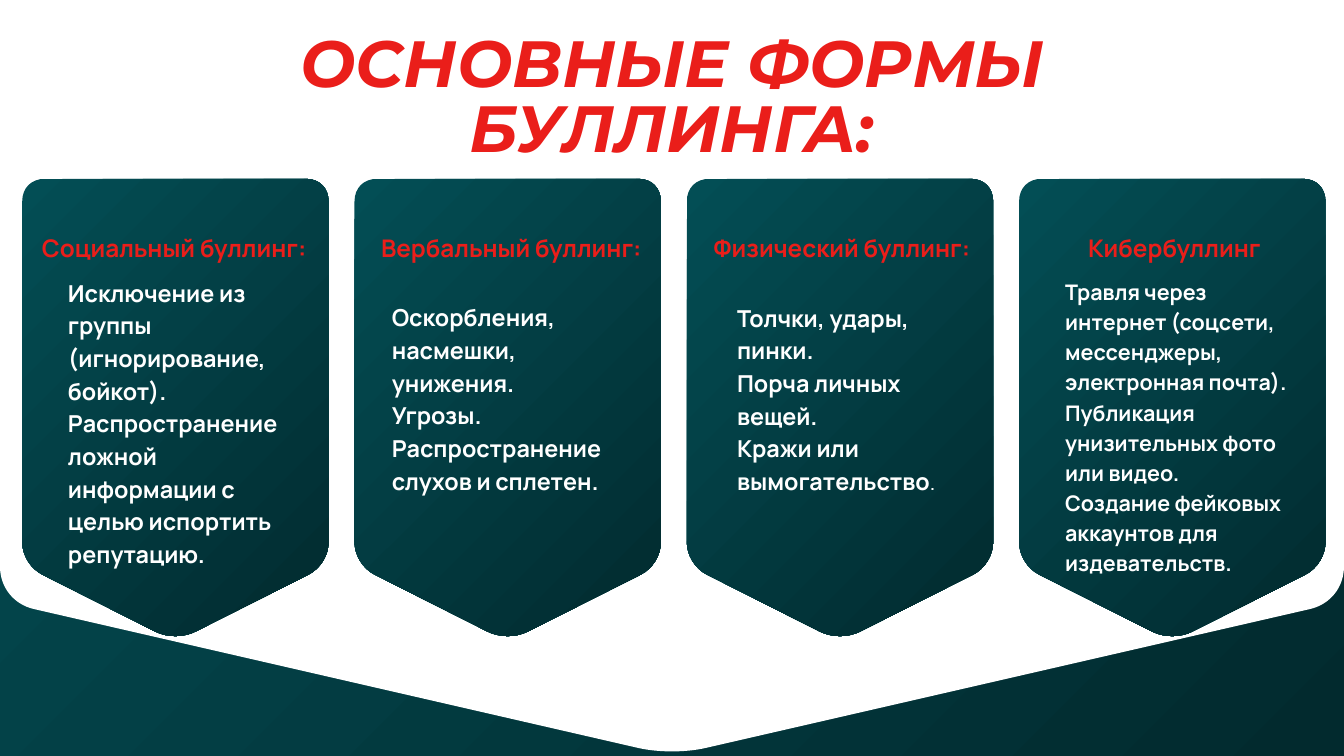
from dataclasses import dataclass
from math import hypot

from pptx import Presentation
from pptx.dml.color import RGBColor
from pptx.enum.text import MSO_AUTO_SIZE as AutoSize, PP_ALIGN as Align
from pptx.oxml import parse_xml
from pptx.oxml.ns import nsdecls, qn
from pptx.util import Cm, Pt


@dataclass(frozen=True)
class Theme:
    teal: RGBColor = RGBColor(0x03, 0x4E, 0x55)
    dark: RGBColor = RGBColor(0x02, 0x2A, 0x2E)
    red: RGBColor = RGBColor(0xEA, 0x1E, 0x1A)
    white: RGBColor = RGBColor(0xFF, 0xFF, 0xFF)
    title_font: str = "Montserrat"
    text_font: str = "Manrope"
    title_size: float = 70
    head_size: float = 26
    body_size: float = 25
    small_size: float = 23


T = Theme()
TITLE = "ОСНОВНЫЕ ФОРМЫ БУЛЛИНГА:"

# heading and its left inside the banner (cm), text size, left, top and height of the text,
# paragraphs; whatever follows "|" in a paragraph is not bold
BANNERS = [
    ("Социальный буллинг:", 0, T.body_size, 1.73, 3.6, 11.9, [
        "Исключение из группы (игнорирование, бойкот).",
        "Распространение ложной информации с целью испортить репутацию."]),
    (" Вербальный буллинг:", 0.09, T.body_size, 1.41, 4.54, 8.25, [
        "Оскорбления, насмешки, унижения.",
        "Угрозы.",
        "Распространение слухов и сплетен."]),
    ("Физический буллинг:", 0.12, T.body_size, 1.9, 4.55, 8.25, [
        "Толчки, удары, пинки.",
        "Порча личных вещей.",
        "Кражи или вымогательство|."]),
    ("Кибербуллинг", 0.12, T.small_size, 1.74, 3.64, 12.04, [
        "Травля через интернет (соцсети, мессенджеры, электронная почта).",
        "Публикация унизительных фото или видео.",
        "Создание фейковых аккаунтов для издевательств."]),
]


def fill_gradient(fill):
    """Teal at the top left to dark at the bottom right."""
    fill.gradient()
    fill.gradient_angle = 315
    for stop, color, position in zip(fill.gradient_stops, (T.teal, T.dark), (0, 1)):
        stop.color.rgb = color
        stop.position = position


def corner_curves(corners, cut, pull=0.6):
    """Four Bézier points for each corner of a polygon, in drawing order."""
    def toward(a, b, length):
        f = length / hypot(b[0] - a[0], b[1] - a[1])
        return a[0] + f * (b[0] - a[0]), a[1] + f * (b[1] - a[1])

    points = []
    for i, corner in enumerate(corners):
        before, after = corners[i - 1], corners[(i + 1) % len(corners)]
        near = cut * (1 - pull)
        points += [toward(corner, before, cut), toward(corner, before, near),
                   toward(corner, after, near), toward(corner, after, cut)]
    return points


def bend_corners(sp):
    """Join the three segments that follow each corner's start into one curve."""
    lines = list(sp._element.iter(qn("a:lnTo")))
    for i in range(0, len(lines), 4):
        curve = parse_xml(f"<a:cubicBezTo {nsdecls('a')}/>")
        lines[i].addprevious(curve)
        for line in lines[i:i + 3]:
            curve.append(line[0])
            line.getparent().remove(line)


def add_pennant(s, x, y, w, h, shoulder, cut):
    """Rounded rectangle that narrows to a tip below the shoulder."""
    corners = [(x, y), (x + w, y), (x + w, y + shoulder), (x + w / 2, y + h), (x, y + shoulder)]
    points = [(Cm(px), Cm(py)) for px, py in corner_curves(corners, cut)]
    builder = s.shapes.build_freeform(*points[0])
    builder.add_line_segments(points[1:], close=True)
    sp = builder.convert_to_shape()
    bend_corners(sp)
    sp.shadow.inherit = False
    sp.line.fill.background()
    return sp


def add_text(s, box, lines, font, size, color, spacing, align=Align.LEFT, italic=False):
    tf = s.shapes.add_textbox(*map(Cm, box)).text_frame
    tf.word_wrap = True
    tf.auto_size = AutoSize.SHAPE_TO_FIT_TEXT
    tf.margin_left = tf.margin_right = tf.margin_top = tf.margin_bottom = 0
    for i, line in enumerate(lines):
        p = tf.add_paragraph() if i else tf.paragraphs[0]
        p.alignment = align
        p.line_spacing = Pt(round(size * spacing, 1))
        p.font.name, p.font.size, p.font.bold, p.font.italic = font, Pt(size), True, italic
        p.font.color.rgb = color
        bold, _, regular = line.partition("|")
        p.add_run().text = bold
        if regular:
            r = p.add_run()
            r.text = regular
            r.font.bold = False


def add_backdrop(s, w):
    fill_gradient(s.background.fill)
    panel = add_pennant(s, 0, -18.14, w, 46.71, shoulder=40.87, cut=1.32)
    panel.fill.solid()
    panel.fill.fore_color.rgb = T.white


def add_banner(s, x, y, w, h, content):
    heading, head_left, size, left, top, height, lines = content
    fill_gradient(add_pennant(s, x, y, w, h, shoulder=14.58, cut=0.86).fill)
    add_text(s, (x + head_left, y + 1.88, w - 0.08, 1.27), [heading],
             T.text_font, T.head_size, T.red, 1.4, Align.CENTER)
    add_text(s, (x + left, y + top, 8.89, height), lines,
             T.text_font, size, T.white, 1.4)


def main():
    prs = Presentation()
    prs.slide_width, prs.slide_height = Cm(50.8), Cm(28.58)
    s = prs.slides.add_slide(prs.slide_layouts[6])
    add_backdrop(s, 50.8)
    add_text(s, (6.96, 1.37, 36.88, 5.03), [TITLE],
             T.title_font, T.title_size, T.red, 0.99, Align.CENTER, italic=True)
    for i, content in enumerate(BANNERS):
        add_banner(s, 0.84 + 12.56 * i, 6.76, 11.58, 17.5, content)
    prs.save("out.pptx")


if __name__ == "__main__":
    main()
